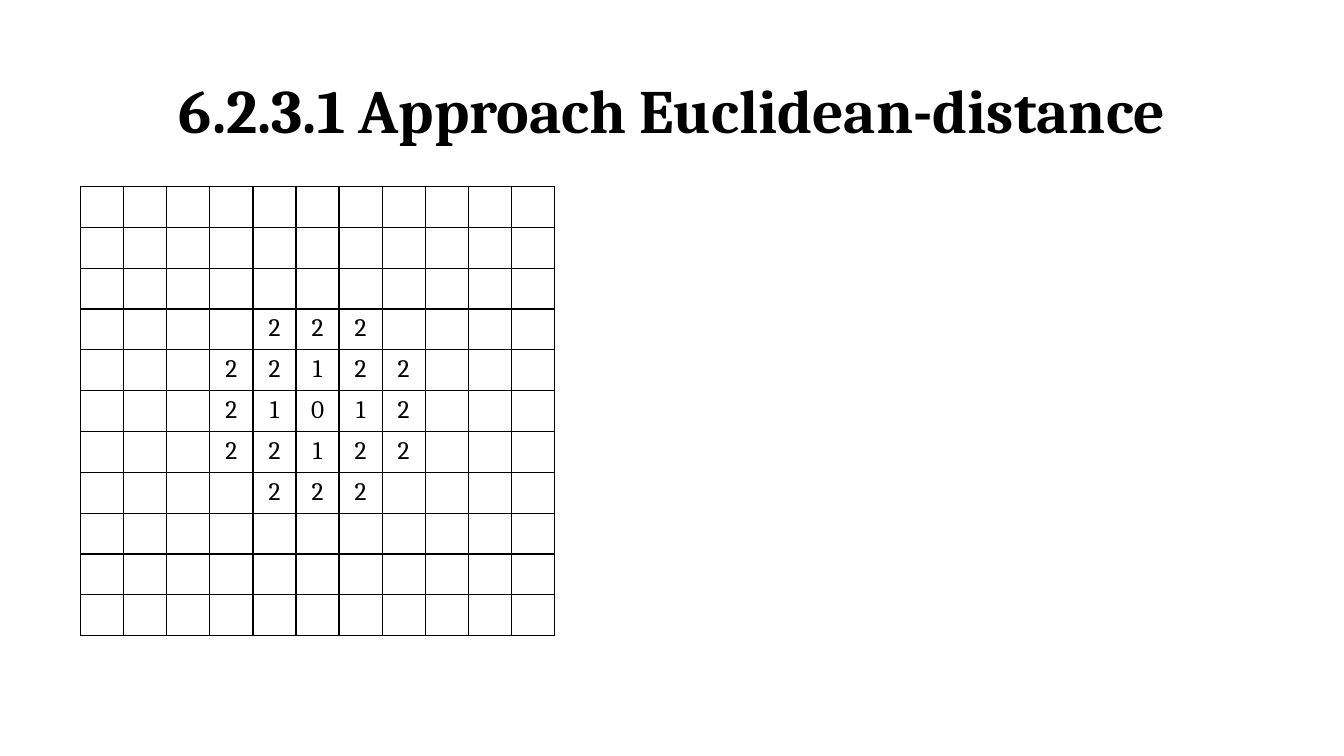
from lxml.etree import SubElement as Sub
from pptx import Presentation
from pptx.dml.color import RGBColor as RGB
from pptx.enum.text import MSO_ANCHOR as Anchor, PP_ALIGN as Align
from pptx.oxml.ns import qn
from pptx.util import Inches, Pt

TITLE = "6.2.3.1 Approach Euclidean-distance"
SIDE = 11  # cells along each side of the grid
FIRST_ROW, FIRST_COL = 3, 3
DISTANCES = [
    " 222 ",
    "22122",
    "21012",
    "22122",
    " 222 ",
]
TITLE_BOX = (0.92, 0.4, 11.5, 1.45)
GRID_BOX = (0.8, 1.85, 4.7, 4.46)
COLORS = {"text": "000000", "line": "000000"}
FONT = "Cambria"


def write(frame, text, size=18, bold=False, spacing=None):
    para = frame.paragraphs[0]
    para.alignment = Align.CENTER
    para.line_spacing = spacing
    run = para.add_run()
    run.text = text
    run.font.name = FONT
    run.font.size = Pt(size)
    run.font.bold = bold
    run.font.color.rgb = RGB.from_string(COLORS["text"])


def border(cell, width=1):
    """Draw a solid line on all four sides; call before setting the fill."""
    props = cell._tc.get_or_add_tcPr()
    for side in ("a:lnL", "a:lnR", "a:lnT", "a:lnB"):
        line = Sub(props, qn(side), w=str(Pt(width)))
        fill = Sub(line, qn("a:solidFill"))
        Sub(fill, qn("a:srgbClr"), val=COLORS["line"])


def add_title(slide):
    box = slide.shapes.add_textbox(*map(Inches, TITLE_BOX))
    frame = box.text_frame
    frame.word_wrap = True
    frame.vertical_anchor = Anchor.MIDDLE
    write(frame, TITLE, size=44, bold=True, spacing=0.9)


def add_grid(slide):
    table = slide.shapes.add_table(SIDE, SIDE, *map(Inches, GRID_BOX)).table
    table.first_row = False
    table.horz_banding = False
    for cell in table.iter_cells():
        border(cell)
        cell.fill.background()
    for row, line in enumerate(DISTANCES, FIRST_ROW):
        for col, digit in enumerate(line, FIRST_COL):
            if digit != " ":
                write(table.cell(row, col).text_frame, digit)


def main():
    deck = Presentation()
    deck.slide_width, deck.slide_height = Inches(13.33), Inches(7.5)
    slide = deck.slides.add_slide(deck.slide_layouts[6])
    add_title(slide)
    add_grid(slide)
    deck.save("out.pptx")


if __name__ == "__main__":
    main()
